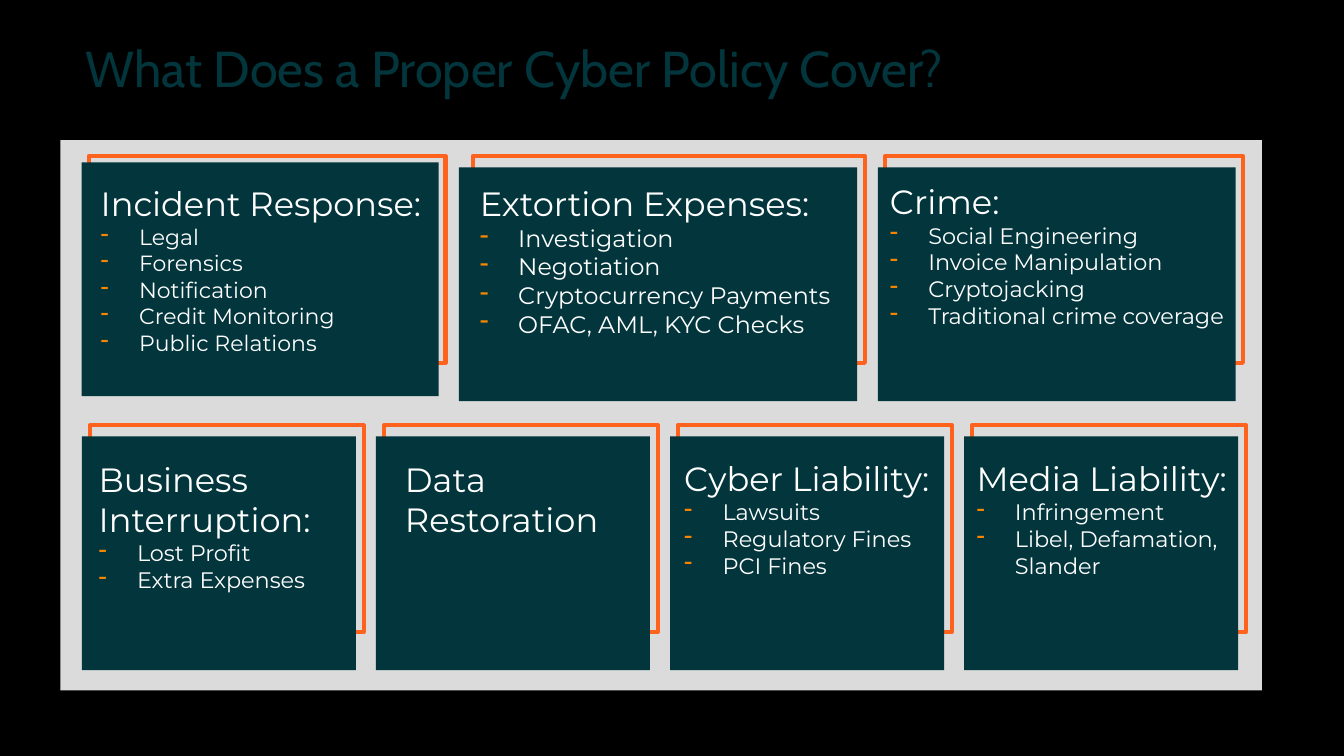
from lxml import etree
from pptx import Presentation
from pptx.dml.color import RGBColor
from pptx.enum.shapes import MSO_SHAPE
from pptx.enum.text import MSO_ANCHOR
from pptx.oxml.ns import qn
from pptx.util import Pt

RECT = MSO_SHAPE.RECTANGLE
TOP, MIDDLE = MSO_ANCHOR.TOP, MSO_ANCHOR.MIDDLE

COLORS = {
    "back": "000000",
    "white": "FFFFFF",
    "teal": "02363C",
    "orange": "FF621C",
    "bullet": "F88600",
}
TITLE = {"name": "Cabin", "size": Pt(36)}
HEADING_SIZE = 24
INDENT = 27.4

FRAME_H, PANEL_H = 147.6, 167
TOP_FRAME_Y, BOTTOM_FRAME_Y = 111.6, 303.8
BOTTOM_X, BOTTOM_PITCH, BOTTOM_W = 58.4, 210.1, 195.8
BOTTOM_PANEL_Y, BOTTOM_SHIFT = 311.6, 5.6

# frame (x, width), panel (x, y, width), text box, heading, item size, items
TOP_CARDS = [
    ((63.4, 254.9), (58.4, 115.9, 254.9), (64.8, 127.4, 246.2, 139),
     "Incident Response:", 15.7,
     ["Legal", "Forensics", "Notification", "Credit Monitoring", "Public Relations"]),
    ((337.7, 280.1), (327.8, 119.5, 284.4), (335.7, 127.4, 290.9, 180),
     "Extortion Expenses:", 17,
     ["Investigation", "Negotiation", "Cryptocurrency Payments", "OFAC, AML, KYC Checks"]),
    ((632.2, 255.6), (627.1, 119.5, 255.6), (628.6, 126, 288, 177),
     "Crime:", 16,
     ["Social Engineering", "Invoice Manipulation", "Cryptojacking",
      "Traditional crime coverage"]),
]

# text box, heading, items
BOTTOM_CARDS = [
    ((63.4, 324, 194.4, 94.3), "Business Interruption:", ["Lost Profit", "Extra Expenses"]),
    ((282.2, 324, 188.6, 106.6), "Data Restoration", []),
    ((481.7, 323.3, 192.2, 164.9), "Cyber Liability:",
     ["Lawsuits", "Regulatory Fines", "PCI Fines"]),
    ((690.5, 323.3, 200.2, 144.7), "Media Liability:",
     ["Infringement", "Libel, Defamation, Slander"]),
]


def rgb(name):
    return RGBColor.from_string(COLORS[name])


class Deck:
    def __init__(self, slide, font, item_size):
        self.s = slide
        self.font = font
        self.item_size = item_size

    def rect(self, box, fill=None, line=None, alpha=None):
        sp = self.s.shapes.add_shape(RECT, *map(Pt, box))
        sp.shadow.inherit = False
        if fill:
            sp.fill.solid()
            sp.fill.fore_color.rgb = rgb(fill)
        else:
            sp.fill.background()
        if line:
            sp.line.color.rgb = rgb(line)
            sp.line.width = Pt(3)
        else:
            sp.line.fill.background()
        if alpha:
            clr = sp._element.spPr.find(qn("a:solidFill"))[0]
            etree.SubElement(clr, qn("a:alpha"), val=str(alpha * 1000))

    def text_box(self, box, anchor=TOP):
        tf = self.s.shapes.add_textbox(*map(Pt, box)).text_frame
        tf.word_wrap = True
        tf.vertical_anchor = anchor
        return tf

    def run(self, p, text, color, **fmt):
        r = p.add_run()
        r.text = text
        for key, value in fmt.items():
            setattr(r.font, key, value)
        r.font.color.rgb = rgb(color)

    def dash(self, p):
        """Give the paragraph a hanging dash bullet."""
        pPr = p._p.get_or_add_pPr()
        pPr.set("marL", str(Pt(INDENT)))
        pPr.set("indent", str(-Pt(INDENT)))
        clr = etree.SubElement(pPr, qn("a:buClr"))
        etree.SubElement(clr, qn("a:srgbClr"), val=COLORS["bullet"])
        etree.SubElement(pPr, qn("a:buSzPct"), val="110000")
        etree.SubElement(pPr, qn("a:buChar"), char="-")

    def title(self, box, text):
        p = self.text_box(box, MIDDLE).paragraphs[0]
        p.line_spacing = 0.9
        self.run(p, text, "teal", **TITLE)

    def card(self, frame, panel, box, heading, items, size=None):
        self.rect(frame, line="orange")
        self.rect(panel, fill="teal")
        tf = self.text_box(box)
        self.run(tf.paragraphs[0], heading, "white", name=self.font, size=Pt(HEADING_SIZE))
        for item in items:
            p = tf.add_paragraph()
            self.dash(p)
            self.run(p, item, "white", name=self.font, size=Pt(size or self.item_size))


def main():
    prs = Presentation()
    prs.slide_width, prs.slide_height = Pt(960), Pt(540)
    s = prs.slides.add_slide(prs.slide_layouts[6])
    s.background.fill.solid()
    s.background.fill.fore_color.rgb = rgb("back")

    deck = Deck(s, "Montserrat", 16)
    deck.rect((43.2, 100.1, 858.2, 393.1), fill="white", alpha=86)
    for (fx, fw), (x, y, w), box, heading, size, items in TOP_CARDS:
        deck.card((fx, TOP_FRAME_Y, fw, FRAME_H), (x, y, w, PANEL_H),
                  box, heading, items, size)
    for i, (box, heading, items) in enumerate(BOTTOM_CARDS):
        x = BOTTOM_X + i * BOTTOM_PITCH
        deck.card((x + BOTTOM_SHIFT, BOTTOM_FRAME_Y, BOTTOM_W, FRAME_H),
                  (x, BOTTOM_PANEL_Y, BOTTOM_W, PANEL_H), box, heading, items)
    deck.title((54, 21.6, 681.8, 59), "What Does a Proper Cyber Policy Cover?")
    prs.save("out.pptx")


if __name__ == "__main__":
    main()
